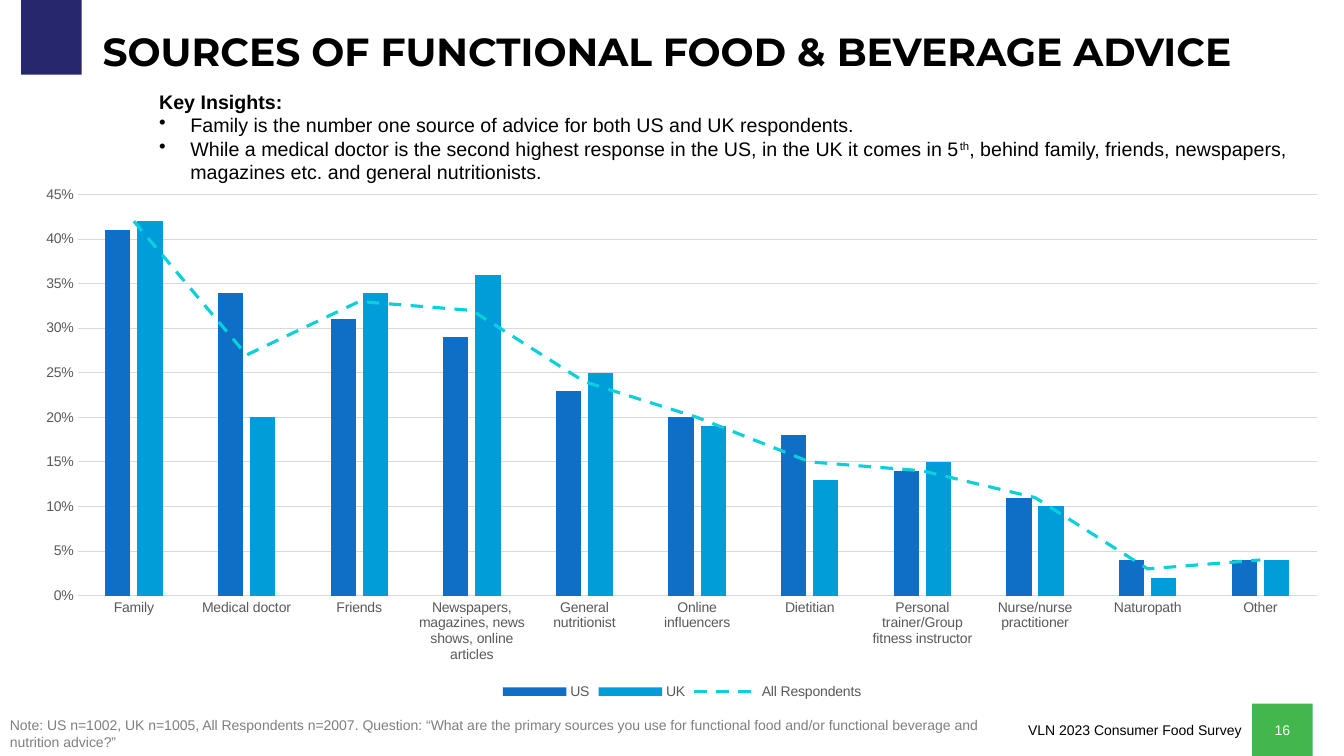
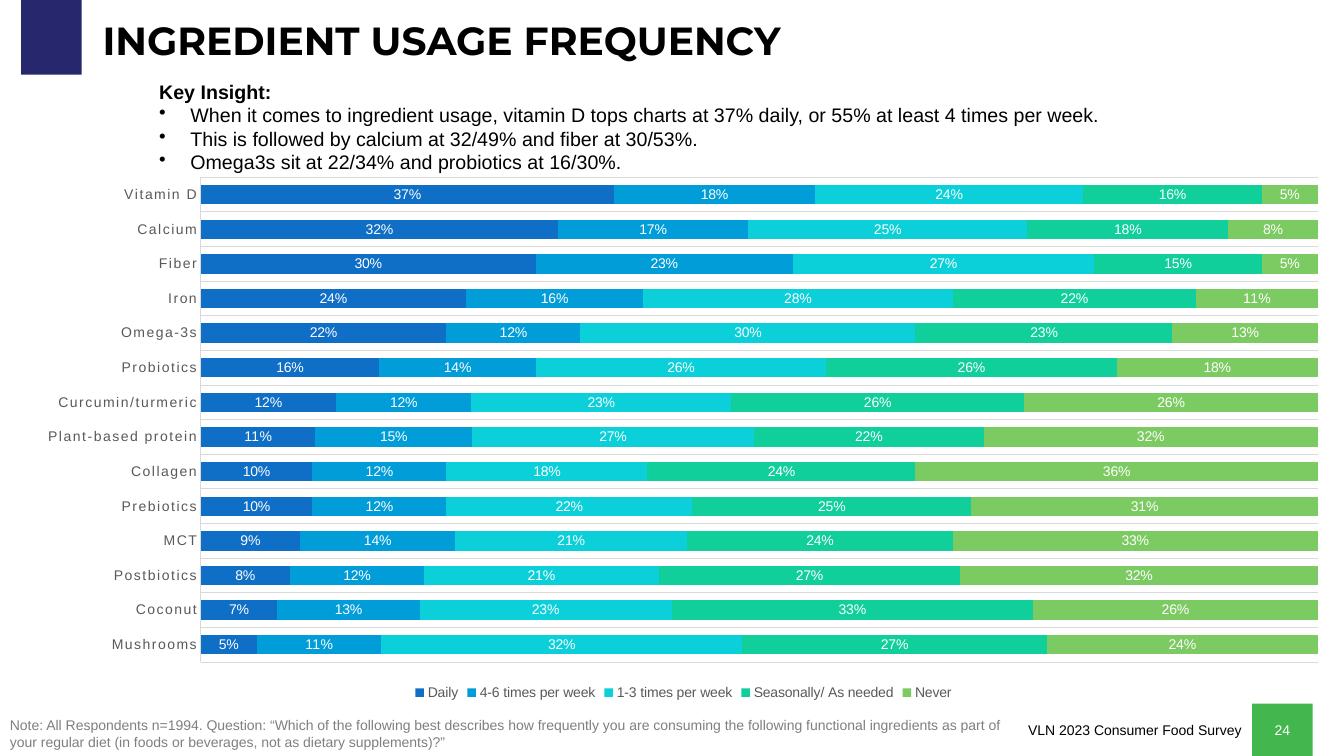
import dataclasses

import pptx
import pptx.chart.data
import pptx.dml.color
import pptx.enum.chart
import pptx.enum.dml
import pptx.enum.shapes
import pptx.enum.text
import pptx.oxml
import pptx.oxml.ns
import pptx.util

PX = 9144  # EMU in one px, 100 px to the inch
RGB = pptx.dml.color.RGBColor.from_string
ALIGN = pptx.enum.text.PP_ALIGN
ANCHOR = pptx.enum.text.MSO_ANCHOR
CHART = pptx.enum.chart.XL_CHART_TYPE
NO_TICK = pptx.enum.chart.XL_TICK_MARK.NONE


@dataclasses.dataclass(frozen=True)
class Theme:
    navy: str = "27276E"
    green: str = "42B74D"
    black: str = "000000"
    white: str = "FFFFFF"
    note: str = "7F7F7F"
    axis: str = "595959"
    grid: str = "D9D9D9"
    series: tuple = ("0F6FC6", "009DD9", "0BD0D9", "10CF9B", "7CCA62")
    heading_font: str = "Montserrat"
    body_font: str = "Arial"
    title_size: int = 28
    body_size: int = 14
    small_size: int = 10


THEME = Theme()
SMALL = {"size": pptx.util.Pt(THEME.small_size), "name": THEME.body_font}
BODY = {"size": pptx.util.Pt(THEME.body_size), "name": THEME.body_font}
TITLE = {"size": pptx.util.Pt(THEME.title_size), "name": THEME.heading_font, "bold": True}


def style_font(font, formats, color):
    for name, value in formats.items():
        setattr(font, name, value)
    font.color.rgb = RGB(color)


def write(box, lines, formats, color, align=ALIGN.LEFT, anchor=ANCHOR.TOP):
    """Fill a box: the first line is plain, later ones are bullets; ^x^ is superscript."""
    frame = box.text_frame
    frame.word_wrap = True
    frame.vertical_anchor = anchor
    for index, line in enumerate(lines):
        para = frame.paragraphs[0] if index == 0 else frame.add_paragraph()
        para.alignment = align
        if index:
            props = para._p.get_or_add_pPr()
            props.set("marL", str(31 * PX))
            props.set("indent", str(-31 * PX))
            bullet = pptx.oxml.parse_xml(
                f'<a:buChar {pptx.oxml.ns.nsdecls("a")} char="•"/>')
            props.append(bullet)
        for part, text in enumerate(line.split("^")):
            span = para.add_run()
            span.text = text
            style_font(span.font, formats, color)
            if index == 0 and len(lines) > 1:
                span.font.bold = True
            if part % 2:
                span._r.get_or_add_rPr().set("baseline", "30000")


PAGES = [
    {
        "number": "16",
        "title": "SOURCES OF FUNCTIONAL FOOD & BEVERAGE ADVICE",
        "title_top": 25,
        "insights": [
            "Key Insights:",
            "Family is the number one source of advice for both US and UK respondents.",
            "While a medical doctor is the second highest response in the US, in the UK it "
            "comes in 5^th^, behind family, friends, newspapers, magazines etc. and general "
            "nutritionists.",
        ],
        "note": "Note: US n=1002, UK n=1005, All Respondents n=2007. Question: “What are the "
                "primary sources you use for functional food and/or functional beverage and "
                "nutrition advice?”",
        "kind": CHART.COLUMN_CLUSTERED,
        "frame": (20, 174, 1313, 524),
        "plot": (77, 193, 1229, 398),
        "gap": 219,
        "overlap": -27,
        "categories": [
            "Family", "Medical doctor", "Friends",
            "Newspapers, magazines, news shows, online articles", "General nutritionist",
            "Online influencers", "Dietitian", "Personal trainer/Group fitness instructor",
            "Nurse/nurse practitioner", "Naturopath", "Other",
        ],
        "percents": {
            "US": [41, 34, 31, 29, 23, 20, 18, 14, 11, 4, 4],
            "UK": [42, 20, 34, 36, 25, 19, 13, 15, 10, 2, 4],
            "All Respondents": [42, 27, 33, 32, 24, 20, 15, 14, 11, 3, 4],
        },
    },
    {
        "number": "24",
        "title": "INGREDIENT USAGE FREQUENCY",
        "title_top": 15,
        "insights": [
            "Key Insight:",
            "When it comes to ingredient usage, vitamin D tops charts at 37% daily, or 55% at "
            "least 4 times per week.",
            "This is followed by calcium at 32/49% and fiber at 30/53%.",
            "Omega3s sit at 22/34% and probiotics at 16/30%.",
        ],
        "note": "Note: All Respondents n=1994. Question: “Which of the following best describes "
                "how frequently you are consuming the following functional ingredients as part "
                "of your regular diet (in foods or beverages, not as dietary supplements)?”",
        "kind": CHART.BAR_STACKED_100,
        "frame": (22, 165, 1312, 534),
        "plot": (199, 176, 1108, 481),
        "gap": 79,
        "overlap": 100,
        "categories": [
            "Mushrooms", "Coconut", "Postbiotics", "MCT", "Prebiotics", "Collagen",
            "Plant-based protein", "Curcumin/turmeric", "Probiotics", "Omega-3s", "Iron",
            "Fiber", "Calcium", "Vitamin D",
        ],
        "percents": {
            "Daily": [5, 7, 8, 9, 10, 10, 11, 12, 16, 22, 24, 30, 32, 37],
            "4-6 times per week": [11, 13, 12, 14, 12, 12, 15, 12, 14, 12, 16, 23, 17, 18],
            "1-3 times per week": [32, 23, 21, 21, 22, 18, 27, 23, 26, 30, 28, 27, 25, 24],
            "Seasonally/ As needed": [27, 33, 27, 24, 25, 24, 22, 26, 26, 23, 22, 15, 18, 16],
            "Never": [24, 26, 32, 33, 31, 36, 32, 26, 18, 13, 11, 5, 8, 5],
        },
    },
]

deck = pptx.Presentation()
deck.slide_width = 1333 * PX
deck.slide_height = 750 * PX

for content in PAGES:
    page = deck.slides.add_slide(deck.slide_layouts[6])

    # Bands
    bands = []
    for left, top, width, height, color in (
        (21, -5, 60, 79, THEME.navy),
        (1242, 698, 60, 52, THEME.green),
    ):
        band = page.shapes.add_shape(pptx.enum.shapes.MSO_SHAPE.RECTANGLE,
                                     left * PX, top * PX, width * PX, height * PX)
        band.shadow.inherit = False
        band.fill.solid()
        band.fill.fore_color.rgb = RGB(color)
        band.line.fill.background()
        bands.append(band)
    write(bands[1], [content["number"]], SMALL, THEME.white, ALIGN.CENTER, ANCHOR.MIDDLE)

    # Title, insights and footers
    title_top = content["title_top"]
    for bounds, lines, formats, color, align, anchor in (
        ((92, title_top, 1150, 50), [content["title"]], TITLE, THEME.black,
         ALIGN.LEFT, ANCHOR.MIDDLE),
        ((148, title_top + 59, 1172, 175), content["insights"], BODY, THEME.black,
         ALIGN.LEFT, ANCHOR.TOP),
        ((792, 711, 449, 27), ["VLN 2023 Consumer Food Survey"], SMALL, THEME.black,
         ALIGN.RIGHT, ANCHOR.TOP),
        ((0, 706, 1024, 44), [content["note"]], SMALL, THEME.note,
         ALIGN.LEFT, ANCHOR.TOP),
    ):
        box = page.shapes.add_textbox(*(length * PX for length in bounds))
        write(box, lines, formats, color, align, anchor)

    # Chart
    data = pptx.chart.data.CategoryChartData(number_format="0%")
    data.categories = content["categories"]
    for name, percents in content["percents"].items():
        data.add_series(name, [percent / 100 for percent in percents])
    frame = content["frame"]
    chart = page.shapes.add_chart(content["kind"], *(length * PX for length in frame), data).chart
    chart.has_title = False
    style_font(chart.font, SMALL, THEME.black)
    chart.has_legend = True
    chart.legend.position = pptx.enum.chart.XL_LEGEND_POSITION.BOTTOM
    chart.legend.include_in_layout = False
    style_font(chart.legend.font, SMALL, THEME.axis)

    bars = chart.plots[0]
    bars.gap_width = content["gap"]
    bars.overlap = content["overlap"]
    bars.vary_by_categories = False

    categories, values = chart.category_axis, chart.value_axis
    for axis in (categories, values):
        axis.major_tick_mark = axis.minor_tick_mark = NO_TICK
        style_font(axis.tick_labels.font, SMALL, THEME.axis)
    values.tick_labels.number_format = "0%"
    values.tick_labels.number_format_is_linked = False

    if content["kind"] == CHART.COLUMN_CLUSTERED:
        gridded = values
        values.minimum_scale, values.maximum_scale, values.major_unit = 0, 0.45, 0.05
        values.format.line.fill.background()
        # Move the last series from the columns to a line plot on the same axes
        column_plot = chart.element.xpath(".//c:barChart")[0]
        moved = column_plot.xpath("c:ser")[-1]
        for flag in moved.xpath("c:invertIfNegative"):
            moved.remove(flag)
        axis_ids = "".join(f'<c:axId val="{number}"/>'
                           for number in column_plot.xpath("c:axId/@val"))
        line_plot = pptx.oxml.parse_xml(
            f'<c:lineChart {pptx.oxml.ns.nsdecls("c")}><c:grouping val="standard"/>'
            f'<c:varyColors val="0"/><c:marker val="1"/>{axis_ids}</c:lineChart>')
        line_plot.insert(2, moved)
        column_plot.addnext(line_plot)
        trend = chart.plots[1].series[0]
        trend.smooth = False
        trend.marker.style = pptx.enum.chart.XL_MARKER_STYLE.NONE
        trend.format.line.width = pptx.util.Pt(2.25)
        trend.format.line.color.rgb = RGB(THEME.series[2])
        trend.format.line.dash_style = pptx.enum.dml.MSO_LINE.DASH
    else:
        gridded = categories
        values.has_major_gridlines = False
        values.visible = False
        for props in chart.element.xpath(".//c:catAx/c:txPr//a:defRPr"):
            props.set("spc", "120")
        bars.has_data_labels = True
        labels = bars.data_labels
        labels.show_value = True
        labels.number_format = "0%"
        labels.number_format_is_linked = False
        labels.position = pptx.enum.chart.XL_LABEL_POSITION.CENTER
        style_font(labels.font, SMALL, THEME.white)

    gridded.has_major_gridlines = True
    for line in (categories.format.line, gridded.major_gridlines.format.line):
        line.color.rgb = RGB(THEME.grid)
        line.width = pptx.util.Pt(0.75)
    for series, color in zip(bars.series, THEME.series):
        series.format.fill.solid()
        series.format.fill.fore_color.rgb = RGB(color)

    # Place the inner plot area as fractions of the chart frame
    left, top, width, height = content["plot"]
    fractions = {"x": (left - frame[0]) / frame[2], "y": (top - frame[1]) / frame[3],
                 "w": width / frame[2], "h": height / frame[3]}
    sizes = "".join(f'<c:{key} val="{value:.4f}"/>' for key, value in fractions.items())
    layout = pptx.oxml.parse_xml(
        f'<c:layout {pptx.oxml.ns.nsdecls("c")}><c:manualLayout><c:layoutTarget val="inner"/>'
        f'<c:xMode val="edge"/><c:yMode val="edge"/>{sizes}</c:manualLayout></c:layout>')
    plot_area = chart.element.xpath(".//c:plotArea")[0]
    for automatic in plot_area.xpath("c:layout"):
        plot_area.remove(automatic)
    plot_area.insert(0, layout)

deck.save("out.pptx")
